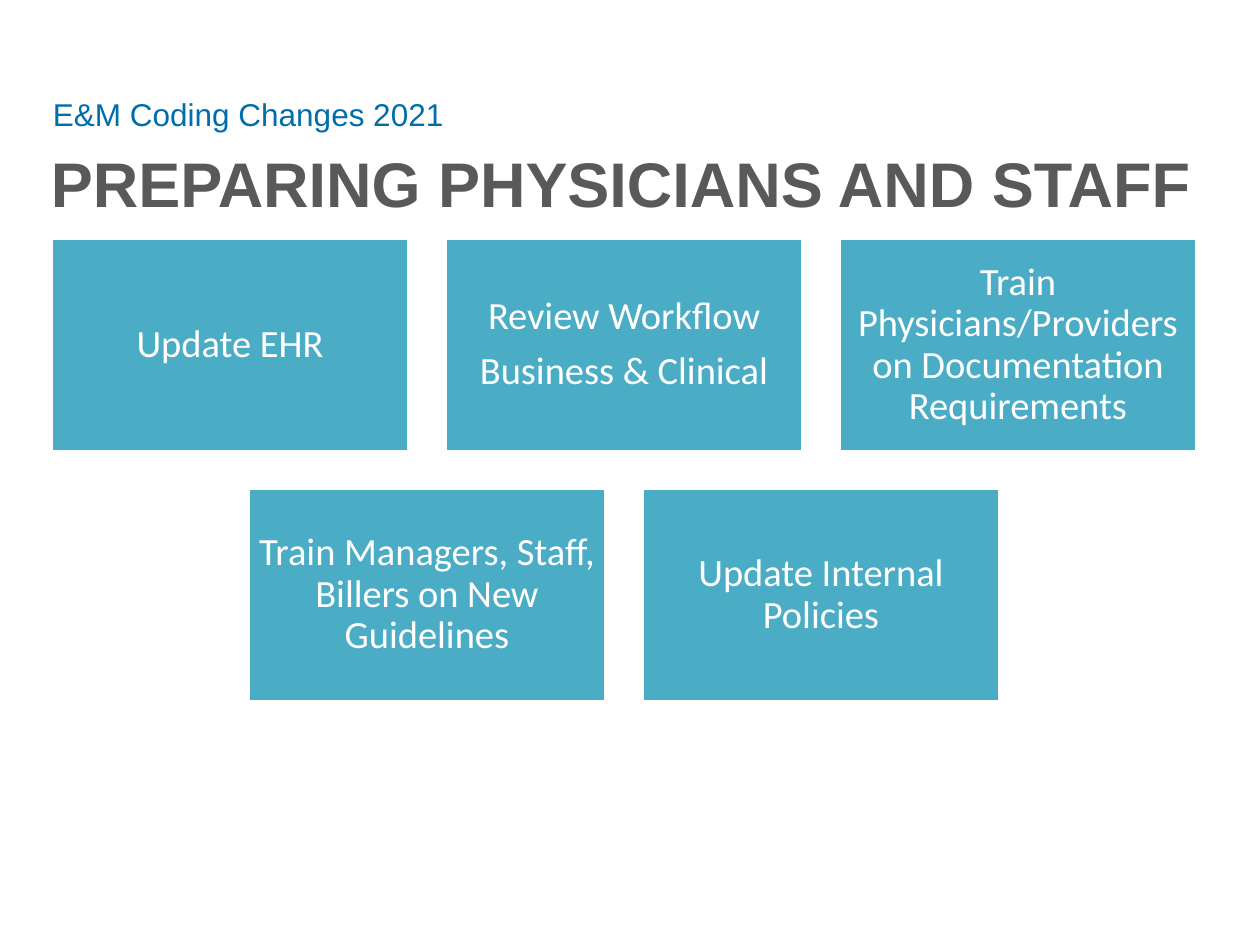
"""Build the slide on preparing physicians and staff for the 2021 coding changes."""
from pptx import Presentation
from pptx.dml.color import RGBColor
from pptx.enum.shapes import MSO_SHAPE
from pptx.enum.text import MSO_ANCHOR, MSO_AUTO_SIZE, PP_ALIGN
from pptx.util import Pt

SCALE = 914400 / 126
COLORS = {"title": "595959", "subtitle": "006EAA", "box": "4BACC6", "white": "FFFFFF"}


def px(length):
    return round(length * SCALE)


def write(shape, lines, size, color, font="Arial", bold=False, align=PP_ALIGN.LEFT,
          anchor=MSO_ANCHOR.TOP, insets=(13, 6, 13, 0), line_spacing=1.0, space_after=0):
    frame = shape.text_frame
    frame.word_wrap = True
    frame.auto_size = MSO_AUTO_SIZE.NONE
    frame.vertical_anchor = anchor
    frame.margin_left, frame.margin_top, frame.margin_right, frame.margin_bottom = map(px, insets)
    frame.text = "\n".join(lines)
    for paragraph in frame.paragraphs:
        paragraph.alignment = align
        paragraph.line_spacing = line_spacing
        paragraph.space_before = Pt(0)
        paragraph.space_after = Pt(space_after)
        for run in paragraph.runs:
            run.font.name = font
            run.font.size = Pt(size)
            run.font.bold = bold
            run.font.color.rgb = RGBColor.from_string(COLORS[color])


presentation = Presentation()
presentation.slide_width = px(1260)
presentation.slide_height = px(945)
slide = presentation.slides.add_slide(presentation.slide_layouts[2])

title, subtitle = slide.placeholders
title.left, title.top, title.width, title.height = map(px, (38, 132, 1173, 85))
write(title, ["PREPARING PHYSICIANS AND STAFF"], 36, "title", bold=True, insets=(13, 13, 13, 0))
subtitle.left, subtitle.top, subtitle.width, subtitle.height = map(px, (40, 87, 455, 57))
write(subtitle, ["E&M Coding Changes 2021"], 18, "subtitle", insets=(13, 8, 13, 0))

BOX_WIDTH, BOX_HEIGHT = 358, 214
COLUMN_STEP, ROW_STEP = 394, 250
GRID_LEFT, GRID_TOP = 51, 238
rows = [
    [["Update EHR"],
     ["Review Workflow", "Business & Clinical"],
     ["Train Physicians/Providers on Documentation Requirements"]],
    [["Train Managers, Staff, Billers on New Guidelines"],
     ["Update Internal Policies"]],
]
for row_index, row in enumerate(rows):
    row_left = GRID_LEFT + (len(rows[0]) - len(row)) * COLUMN_STEP // 2
    for column_index, lines in enumerate(row):
        box = slide.shapes.add_shape(
            MSO_SHAPE.RECTANGLE,
            px(row_left + column_index * COLUMN_STEP), px(GRID_TOP + row_index * ROW_STEP),
            px(BOX_WIDTH), px(BOX_HEIGHT))
        box.shadow.inherit = False
        box.fill.solid()
        box.fill.fore_color.rgb = RGBColor.from_string(COLORS["box"])
        box.line.color.rgb = RGBColor.from_string(COLORS["white"])
        box.line.width = Pt(2)
        write(box, lines, 22, "white", font="Calibri", align=PP_ALIGN.CENTER,
              anchor=MSO_ANCHOR.MIDDLE, insets=(11, 11, 11, 11),
              line_spacing=0.9, space_after=7.7)

presentation.save("out.pptx")
